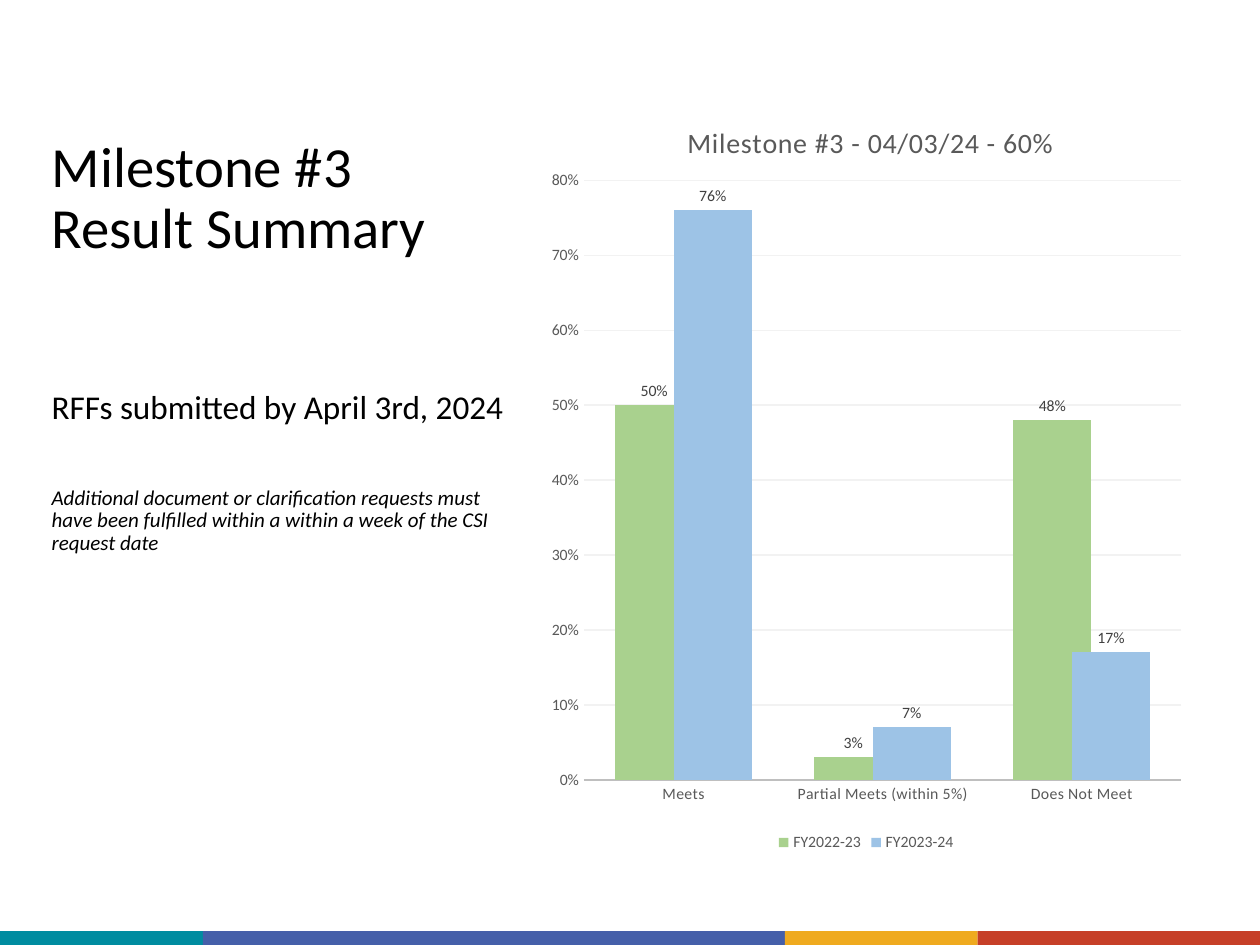
from dataclasses import dataclass

from lxml.etree import SubElement
from pptx import Presentation
from pptx.chart.data import CategoryChartData
from pptx.dml.color import RGBColor
from pptx.enum.chart import (XL_CHART_TYPE, XL_LABEL_POSITION,
                             XL_LEGEND_POSITION, XL_TICK_MARK)
from pptx.enum.shapes import MSO_SHAPE
from pptx.enum.text import MSO_ANCHOR, MSO_AUTO_SIZE, PP_ALIGN
from pptx.oxml import parse_xml
from pptx.oxml.ns import nsdecls, qn
from pptx.util import Inches, Pt

COLUMNS, ROWS = 100, 75


@dataclass(frozen=True)
class Theme:
    font: str = "Calibri"
    text: str = "000000"
    muted: str = "595959"
    label: str = "404040"
    axis: str = "BFBFBF"
    grid: str = "F2F2F2"
    series: tuple = ("A9D18E", "9DC3E6")
    stripes: tuple = ("008CA0", "455FA9", "EFAA1F", "C63F28")
    title_size: float = 32.4
    body_size: float = 19
    note_size: float = 12
    chart_title_size: float = 16
    chart_size: float = 9


def set_font(font, theme, size, color, italic=False):
    font.name, font.size = theme.font, Pt(size)
    font.bold, font.italic = False, italic
    font.color.rgb = RGBColor.from_string(color)


def add_text(para, text, theme, size, color=None, italic=False, space_before=0):
    """Fill a left-aligned, unbulleted paragraph; each new line is a soft break."""
    properties = para._p.get_or_add_pPr()
    properties.set("marL", "0")
    properties.set("indent", "0")
    SubElement(properties, qn("a:buNone"))
    para.alignment, para.line_spacing = PP_ALIGN.LEFT, 0.9
    para.space_before = Pt(space_before)
    for number, line in enumerate(text.splitlines()):
        if number:
            para.add_line_break()
        span = para.add_run()
        span.text = line
        set_font(span.font, theme, size, color or theme.text, italic)


def pin(element, position, target="", **shares):
    """Give a chart part a manual layout, in shares of the chart's size."""
    for old in element.findall(qn("c:layout")):
        element.remove(old)
    inner = f'<c:layoutTarget val="{target}"/>' if target else ""
    inner += "".join(f'<c:{key}Mode val="edge"/>' for key in "xy")
    inner += "".join(f'<c:{key} val="{share}"/>' for key, share in shares.items())
    element.insert(position, parse_xml(
        f'<c:layout {nsdecls("c")}><c:manualLayout>{inner}'
        "</c:manualLayout></c:layout>"))


def track(element, tag, hundredths):
    """Set letter spacing on every run property of the given tag."""
    for properties in element.iter(qn(tag)):
        properties.set("spc", str(hundredths))


class SlideBuilder:
    def __init__(self, deck, theme):
        self.deck, self.theme = deck, theme
        self.page = deck.slides.add_slide(deck.slide_layouts[1])

    def area(self, column, row, columns, rows):
        """Turn grid units into left, top, width and height."""
        across, down = self.deck.slide_width / COLUMNS, self.deck.slide_height / ROWS
        return (round(column * across), round(row * down),
                round(columns * across), round(rows * down))

    def placeholder(self, box, area, top_inset=0.05):
        box.left, box.top, box.width, box.height = self.area(*area)
        frame = box.text_frame
        frame.auto_size, frame.word_wrap = MSO_AUTO_SIZE.NONE, True
        frame.vertical_anchor = MSO_ANCHOR.TOP
        frame.margin_top = Inches(top_inset)
        return frame

    def title(self, text, area):
        frame = self.placeholder(self.page.shapes.title, area)
        add_text(frame.paragraphs[0], text, self.theme, self.theme.title_size)

    def body(self, lines, area, top_inset):
        frame = self.placeholder(self.page.placeholders[1], area, top_inset)
        for number, (text, style) in enumerate(lines):
            para = frame.add_paragraph() if number else frame.paragraphs[0]
            add_text(para, text, self.theme, **style)

    def footer_stripes(self, edges, row, rows):
        for start, end, color in zip(edges, edges[1:], self.theme.stripes):
            stripe = self.page.shapes.add_shape(
                MSO_SHAPE.RECTANGLE, *self.area(start, row, end - start, rows))
            stripe.shadow.inherit = False
            stripe.fill.solid()
            stripe.fill.fore_color.rgb = RGBColor.from_string(color)
            stripe.line.fill.background()

    def column_chart(self, heading, categories, series, area):
        theme = self.theme
        data = CategoryChartData(number_format="0%")
        data.categories = categories
        for name, values in series.items():
            data.add_series(name, values)
        chart = self.page.shapes.add_chart(
            XL_CHART_TYPE.COLUMN_CLUSTERED, *self.area(*area), data).chart
        set_font(chart.font, theme, theme.chart_size, theme.muted)

        chart.has_title = True
        title = chart.chart_title
        title.include_in_layout = False
        span = title.text_frame.paragraphs[0].add_run()
        span.text = heading
        set_font(span.font, theme, theme.chart_title_size, theme.muted)
        track(title._element, "a:rPr", 50)
        pin(title._element, 1, x=0.22, y=0.04)

        chart.has_legend = True
        chart.legend.position = XL_LEGEND_POSITION.BOTTOM
        chart.legend.include_in_layout = False
        set_font(chart.legend.font, theme, theme.chart_size, theme.muted)
        self.axes(chart)

        plot = chart.plots[0]
        plot.gap_width, plot.overlap, plot.vary_by_categories = 80, 25, False
        for columns, color in zip(plot.series, theme.series):
            columns.format.fill.solid()
            columns.format.fill.fore_color.rgb = RGBColor.from_string(color)
            labels = columns.data_labels
            labels.show_value = True
            labels.position = XL_LABEL_POSITION.OUTSIDE_END
            labels.number_format, labels.number_format_is_linked = "0%", False
            set_font(labels.font, theme, theme.chart_size, theme.label)
        plot_area = chart._chartSpace.find(".//" + qn("c:plotArea"))
        pin(plot_area, 0, "inner", x=0.07, y=0.12, w=0.91, h=0.78)

    def axes(self, chart):
        theme = self.theme
        names, scale = chart.category_axis, chart.value_axis
        for axis in (names, scale):
            axis.major_tick_mark = axis.minor_tick_mark = XL_TICK_MARK.NONE
            set_font(axis.tick_labels.font, theme, theme.chart_size, theme.muted)
        track(names._element, "a:defRPr", 20)
        names.format.line.color.rgb = RGBColor.from_string(theme.axis)
        names.format.line.width = Pt(1.25)
        scale.minimum_scale, scale.maximum_scale, scale.major_unit = 0, 0.8, 0.1
        scale.tick_labels.number_format = "0%"
        scale.tick_labels.number_format_is_linked = False
        scale.format.line.fill.background()
        scale.has_major_gridlines = True
        grid_line = scale.major_gridlines.format.line
        grid_line.color.rgb = RGBColor.from_string(theme.grid)
        grid_line.width = Pt(0.75)


def main():
    deck = Presentation()
    deck.slide_width, deck.slide_height = Inches(10), Inches(7.5)
    theme = Theme()
    slide = SlideBuilder(deck, theme)
    slide.footer_stripes((0, 16.1, 62.3, 77.6, 100), row=73.9, rows=1.1)
    slide.title("Milestone #3\nResult Summary", (3.1, 10.5, 39.5, 15.7))
    slide.body([
        ("RFFs submitted by April 3rd, 2024", dict(size=theme.body_size)),
        ("Additional document or clarification requests must have been "
         "fulfilled within a within a week of the CSI request date",
         dict(size=theme.note_size, italic=True, space_before=34.5)),
    ], (3.1, 26.2, 39.5, 38.8), top_inset=0.48)
    slide.column_chart(
        "Milestone #3 - 04/03/24 - 60%",
        ("Meets", "Partial Meets (within 5%)", "Does Not Meet"),
        {"FY2022-23": (0.5, 0.03, 0.48), "FY2023-24": (0.76, 0.07, 0.17)},
        (42.7, 7, 52.1, 61))
    deck.save("out.pptx")


if __name__ == "__main__":
    main()
